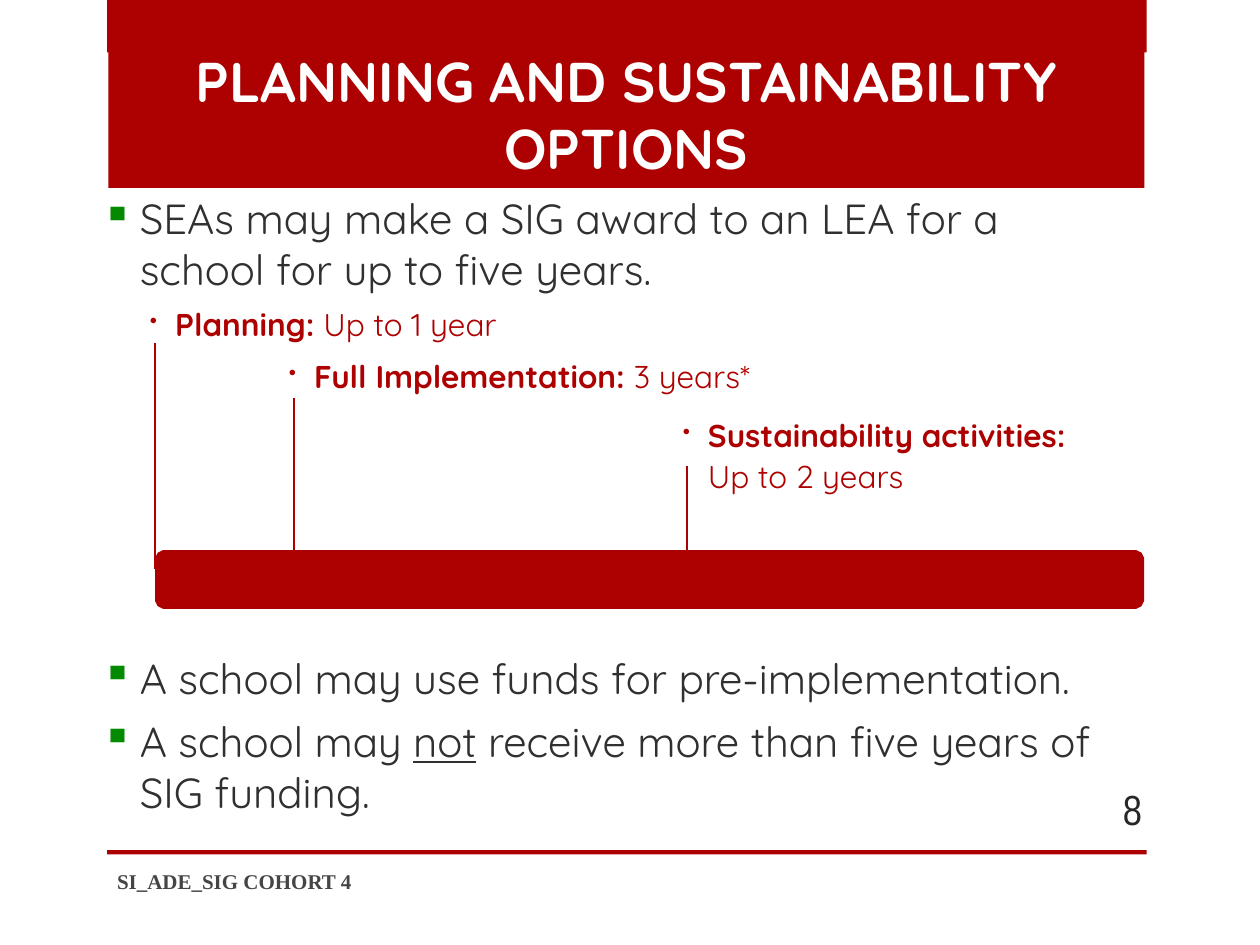
from lxml.etree import SubElement
from pptx import Presentation
from pptx.dml.color import RGBColor
from pptx.enum.shapes import MSO_CONNECTOR, MSO_SHAPE
from pptx.enum.text import MSO_ANCHOR, MSO_AUTO_SIZE, PP_ALIGN
from pptx.oxml.ns import qn
from pptx.util import Pt

COLOURS = {
    "red": "AD0101",
    "green": "038A00",
    "body": "303030",
    "footer": "454545",
    "number": "262626",
    "white": "FFFFFF",
}
FONT = "Quicksand"


def colour(name):
    return RGBColor.from_string(COLOURS[name])


def add_span(para, text, size=24, font=FONT, ink="body", bold=False, underline=False):
    span = para.add_run()
    span.text = text
    span.font.size = Pt(size)
    span.font.name = font
    span.font.bold = bold
    span.font.underline = underline
    span.font.color.rgb = colour(ink)


def set_bullet(para, char, left, hang, ink, percent=100):
    props = para._p.get_or_add_pPr()
    props.set("marL", str(Pt(left)))
    props.set("indent", str(Pt(-hang)))
    if not char:
        SubElement(props, qn("a:buNone"))
        return
    SubElement(SubElement(props, qn("a:buClr")), qn("a:srgbClr"), val=COLOURS[ink])
    SubElement(props, qn("a:buSzPct"), val=str(percent * 1000))
    SubElement(props, qn("a:buChar"), char=char)


def add_text_box(page, box, margin=0, anchor=MSO_ANCHOR.TOP):
    frame = page.shapes.add_textbox(*map(Pt, box)).text_frame
    frame.word_wrap = True
    frame.vertical_anchor = anchor
    frame.margin_left = frame.margin_right = Pt(margin)
    frame.margin_top = frame.margin_bottom = Pt(margin / 2)
    return frame


def paint(shape):
    shape.shadow.inherit = False
    shape.fill.solid()
    shape.fill.fore_color.rgb = colour("red")
    shape.line.fill.background()


def add_band(page, box):
    paint(page.shapes.add_shape(MSO_SHAPE.RECTANGLE, *map(Pt, box)))


def place_title(page, box, text):
    title = page.shapes.title
    title.left, title.top, title.width, title.height = map(Pt, box)
    title.fill.solid()
    title.fill.fore_color.rgb = colour("red")
    frame = title.text_frame
    frame.word_wrap = True
    frame.auto_size = MSO_AUTO_SIZE.NONE
    frame.vertical_anchor = MSO_ANCHOR.MIDDLE
    para = frame.paragraphs[0]
    para.alignment = PP_ALIGN.CENTER
    add_span(para, text, size=32, ink="white", bold=True)


def add_main_point(para, spans, before=0):
    para.space_before = Pt(before)
    set_bullet(para, "▪", 22.3, 21.6, "green")
    for text, underline in spans:
        add_span(para, text, underline=underline)


def add_phases(page, box, intro, phases):
    frame = add_text_box(page, box)
    add_main_point(frame.paragraphs[0], [(intro, False)])
    for label, detail, indent, before, pitch in phases:
        para = frame.add_paragraph()
        para.space_before = Pt(before)
        set_bullet(para, "•", indent, 14.4, "red", 68)
        add_span(para, label, size=18, ink="red", bold=True)
        if pitch:
            para.line_spacing = Pt(pitch)
            para = frame.add_paragraph()
            para.line_spacing = Pt(pitch)
            para.space_before = Pt(0)
            set_bullet(para, None, indent, 0, "red")
        add_span(para, detail, size=18, ink="red")


def add_timeline(page, box, markers):
    left, top, width, height = box
    right, bottom, cut, edge = left + width, top + height, 4.5, 1.5
    corners = [
        (left + cut, top), (left + edge, top + edge), (left, top + cut),
        (left, bottom - cut), (left + edge, bottom - edge), (left + cut, bottom),
        (right - cut, bottom), (right - edge, bottom - edge), (right, bottom - cut),
        (right, top + cut), (right - edge, top + edge), (right - cut, top),
    ]
    points = [(Pt(x), Pt(y)) for x, y in corners]
    outline = page.shapes.build_freeform(*points[0])
    outline.add_line_segments(points[1:], close=True)
    paint(outline.convert_to_shape())
    for x, start, end in markers:
        marker = page.shapes.add_connector(
            MSO_CONNECTOR.STRAIGHT, Pt(x), Pt(start), Pt(x), Pt(end))
        marker.line.color.rgb = colour("red")
        marker.line.width = Pt(1.25)
        SubElement(marker._element.spPr, qn("a:effectLst"))


def add_limits(page, box, points):
    frame = add_text_box(page, box)
    for index, spans in enumerate(points):
        para = frame.add_paragraph() if index else frame.paragraphs[0]
        add_main_point(para, spans, before=7.2 if index else 0)


def add_label(page, box, text, align=PP_ALIGN.LEFT, **style):
    para = add_text_box(page, box, 7.2, MSO_ANCHOR.MIDDLE).paragraphs[0]
    para.alignment = align
    add_span(para, text, **style)


def main():
    deck = Presentation()
    deck.slide_width, deck.slide_height = Pt(720), Pt(540)
    page = deck.slides.add_slide(deck.slide_layouts[5])
    add_band(page, (61.2, 0, 594, 30))
    add_band(page, (61.2, 485.8, 594, 2.4))
    place_title(page, (62, 22.3, 592, 85), "PLANNING AND SUSTAINABILITY OPTIONS")
    add_phases(
        page, (57.6, 110.2, 590.4, 174.2),
        "SEAs may make a SIG award to an LEA for a school for up to five years.",
        [
            ("Planning: ", "Up to 1 year", 42.5, 6.4, None),
            ("Full Implementation: ", "3 years*", 121.9, 8, None),
            ("Sustainability activities:", "Up to 2 years", 347, 9.8, 23.8),
        ])
    add_timeline(
        page, (88.6, 314.4, 565.2, 33.5),
        [(88.6, 195.8, 325.4), (167.8, 227.5, 321.1), (392.4, 266.4, 324)])
    add_limits(
        page, (57.6, 373, 607, 94.3),
        [
            [("A school may use funds for pre-implementation.", False)],
            [("A school may ", False), ("not", True),
             (" receive more than five years of SIG funding.", False)],
        ])
    add_label(page, (59.8, 488.9, 383.8, 28.8), "SI_ADE_SIG COHORT 4",
              size=12, font="Times New Roman", ink="footer", bold=True)
    add_label(page, (599.8, 447.8, 59.8, 28.8), "8", align=PP_ALIGN.RIGHT,
              font="Arial Narrow", ink="number")
    deck.save("out.pptx")


if __name__ == "__main__":
    main()
